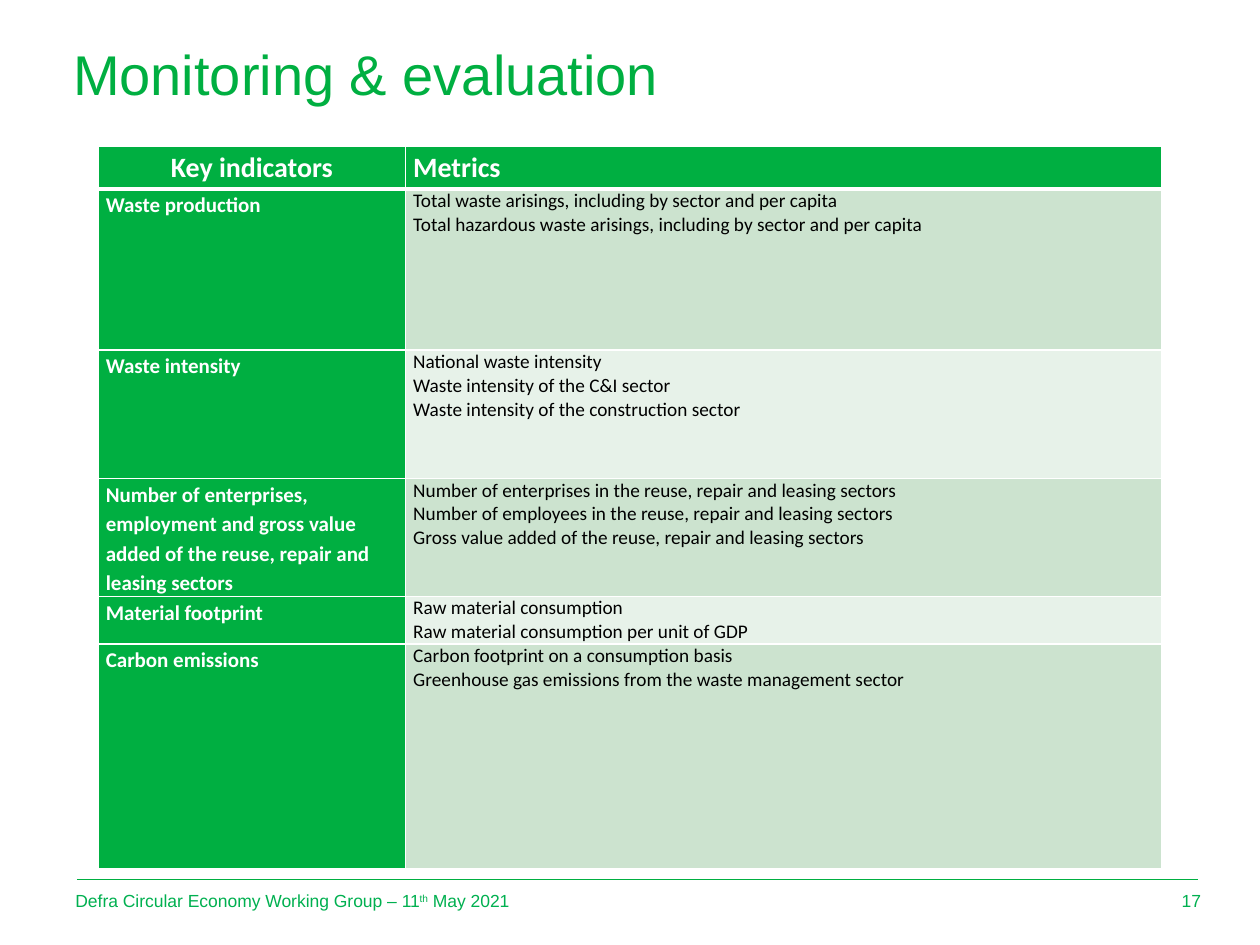
from lxml import etree
from pptx import Presentation
from pptx.dml.color import RGBColor
from pptx.enum.shapes import MSO_CONNECTOR
from pptx.enum.text import MSO_ANCHOR, MSO_AUTO_SIZE, PP_ALIGN
from pptx.oxml import parse_xml
from pptx.oxml.ns import nsdecls, qn
from pptx.util import Inches, Pt

GREEN = RGBColor(0x00, 0xAF, 0x41)
FOOTER_GREEN = RGBColor(0x00, 0xB0, 0x50)
BANDS = [RGBColor(0xCC, 0xE3, 0xCF), RGBColor(0xE7, 0xF2, 0xE9)]
WHITE = RGBColor(0xFF, 0xFF, 0xFF)
BLACK = RGBColor(0x00, 0x00, 0x00)

COL_WIDTHS = [2.44, 6]
ROW_HEIGHTS = [0.34, 1.28, 1.02, 0.91, 0.33, 1.78]
ROWS = [
    ("Key indicators", ["Metrics"]),
    ("Waste production", [
        "Total waste arisings, including by sector and per capita",
        "Total hazardous waste arisings, including by sector and per capita"]),
    ("Waste intensity", [
        "National waste intensity",
        "Waste intensity of the C&I sector",
        "Waste intensity of the construction sector"]),
    ("Number of enterprises, employment and gross value added of the reuse, "
     "repair and leasing sectors", [
         "Number of enterprises in the reuse, repair and leasing sectors",
         "Number of employees in the reuse, repair and leasing sectors",
         "Gross value added of the reuse, repair and leasing sectors"]),
    ("Material footprint", [
        "Raw material consumption",
        "Raw material consumption per unit of GDP"]),
    ("Carbon emissions", [
        "Carbon footprint on a consumption basis",
        "Greenhouse gas emissions from the waste management sector"]),
]


def style_runs(p, font, size, color, bold=False):
    for r in p.runs:
        r.font.name = font
        r.font.size = Pt(size)
        r.font.bold = bold
        r.font.color.rgb = color


def add_borders(cell, top, bottom):
    """Draw white cell borders; top and bottom widths are in points."""
    tcPr = cell._tc.get_or_add_tcPr()
    for side, width in (("L", 1), ("R", 1), ("T", top), ("B", bottom)):
        tcPr.append(parse_xml(
            f'<a:ln{side} {nsdecls("a")} w="{Pt(width)}"><a:solidFill>'
            f'<a:srgbClr val="{WHITE}"/></a:solidFill></a:ln{side}>'))


prs = Presentation()
prs.slide_width, prs.slide_height = Inches(10), Inches(7.5)
s = prs.slides.add_slide(prs.slide_layouts[5])

# Footer rule
rule = s.shapes.add_connector(
    MSO_CONNECTOR.STRAIGHT, Inches(0.61), Inches(6.98), Inches(9.51), Inches(6.98))
rule.line.color.rgb = GREEN
rule.line.width = Pt(0.5)
etree.SubElement(rule._element.spPr, qn("a:effectLst"))

# Title
title = s.shapes.title
title.left, title.top = Inches(0.48), Inches(0.35)
title.width, title.height = Inches(9.04), Inches(0.53)
tf = title.text_frame
tf.text = "Monitoring & evaluation"
tf.auto_size = MSO_AUTO_SIZE.NONE
tf.vertical_anchor = MSO_ANCHOR.MIDDLE
p = tf.paragraphs[0]
p.alignment = PP_ALIGN.LEFT
p.line_spacing = 0.9
style_runs(p, "Arial", 32, GREEN)

# Indicator table
table = s.shapes.add_table(
    len(ROWS), len(COL_WIDTHS), Inches(0.78), Inches(1.16),
    Inches(sum(COL_WIDTHS)), Inches(sum(ROW_HEIGHTS))).table
for column, width in zip(table.columns, COL_WIDTHS):
    column.width = Inches(width)
for row, height in zip(table.rows, ROW_HEIGHTS):
    row.height = Inches(height)

for i, (indicator, metrics) in enumerate(ROWS):
    for j, lines in enumerate(([indicator], metrics)):
        cell = table.cell(i, j)
        is_heading = i == 0 or j == 0
        cell.margin_left = cell.margin_right = Inches(0.06)
        cell.margin_top = cell.margin_bottom = 0
        add_borders(cell, 3 if i == 1 else 1, 3 if i == 0 else 1)
        cell.fill.solid()
        cell.fill.fore_color.rgb = GREEN if is_heading else BANDS[(i - 1) % 2]
        cell.text_frame.text = "\n".join(lines)
        for p in cell.text_frame.paragraphs:
            if is_heading:
                p.line_spacing = 1.15
                p.space_before = Pt(12)
                p.space_after = Pt(0 if i == 3 else 6)
                style_runs(p, "Calibri", 16 if i == 0 else 12, WHITE, True)
            else:
                style_runs(p, "Calibri", 11, BLACK)
table.cell(0, 0).text_frame.paragraphs[0].alignment = PP_ALIGN.CENTER

# Footer text and page number
for left, width, align, parts in (
        (0.5, 6.21, PP_ALIGN.LEFT,
         ["Defra Circular Economy Working Group – 11", "th", " May 2021"]),
        (9.18, 0.45, PP_ALIGN.RIGHT, ["17"])):
    sp = s.shapes.add_textbox(Inches(left), Inches(6.95), Inches(width), Inches(0.4))
    tf = sp.text_frame
    tf.word_wrap = True
    tf.vertical_anchor = MSO_ANCHOR.MIDDLE
    p = tf.paragraphs[0]
    p.alignment = align
    for part in parts:
        r = p.add_run()
        r.text = part
        if part == "th":
            r.font._element.set("baseline", "30000")
    style_runs(p, "Arial", 10, FOOTER_GREEN)

prs.save("out.pptx")
